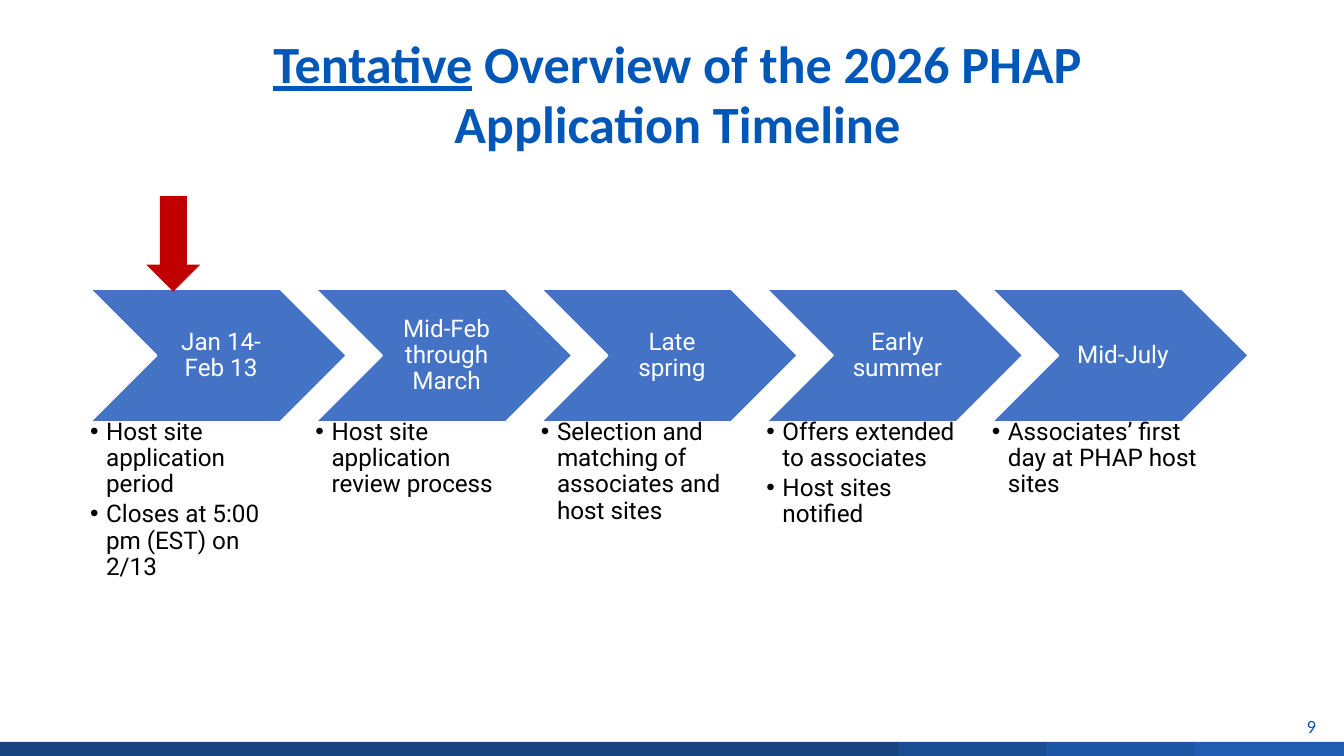
from lxml.etree import SubElement
from pptx import Presentation
from pptx.dml.color import RGBColor
from pptx.enum.shapes import MSO_SHAPE
from pptx.enum.text import MSO_ANCHOR, MSO_AUTO_SIZE, PP_ALIGN
from pptx.oxml.ns import qn
from pptx.util import Inches, Pt

COLORS = {
    "title": "0057B7",
    "chevron": "4472C4",
    "pointer": "C00000",
    "light": "FFFFFF",
    "dark": "000000",
    "band 1": "164380",
    "band 2": "194D93",
    "band 3": "1C56A4",
    "band 4": "1E5DB2",
}
FOOTER_BANDS = [
    (0, 6.69, "band 1"),
    (6.68, 1.11, "band 2"),
    (7.78, 1.12, "band 3"),
    (8.89, 1.11, "band 4"),
]
STAGES = [
    ("Jan 14-Feb 13",
     ["Host site application period", "Closes at 5:00 pm (EST) on 2/13"]),
    ("Mid-Feb through March", ["Host site application review process"]),
    ("Late spring", ["Selection and matching of associates and host sites"]),
    ("Early summer", ["Offers extended to associates", "Host sites notified"]),
    ("Mid-July", ["Associates’ first day at PHAP host sites"]),
]
FIRST_STAGE_LEFT = 0.67
LAST_STAGE_LEFT = 7.38
STAGE_STEP = (LAST_STAGE_LEFT - FIRST_STAGE_LEFT) / (len(STAGES) - 1)


def add_run(paragraph, text, font_name, size, color):
    run = paragraph.add_run()
    run.text = text
    run.font.name = font_name
    run.font.size = Pt(size)
    run.font.color.rgb = RGBColor.from_string(COLORS[color])
    return run


def set_frame(frame, anchor, insets):
    frame.word_wrap = True
    frame.auto_size = MSO_AUTO_SIZE.NONE
    frame.vertical_anchor = anchor
    (frame.margin_left, frame.margin_top,
     frame.margin_right, frame.margin_bottom) = map(Inches, insets)


def add_block(slide, preset, box, color):
    block = slide.shapes.add_shape(preset, *map(Inches, box))
    block.shadow.inherit = False
    block.fill.solid()
    block.fill.fore_color.rgb = RGBColor.from_string(COLORS[color])
    block.line.fill.background()
    return block


def add_title(slide):
    title = slide.shapes.title
    title.left, title.top, title.width, title.height = map(
        Inches, (0.5, 0.23, 9.16, 0.94))
    set_frame(title.text_frame, MSO_ANCHOR.MIDDLE, (0.1, 0.05, 0.18, 0.05))
    heading = title.text_frame.paragraphs[0]
    heading.alignment = PP_ALIGN.CENTER
    heading.line_spacing = Pt(32)

    def add_words(text, underlined):
        words = add_run(heading, text, "Calibri", 28, "title")
        words.font.bold = True
        words.font.underline = underlined

    add_words("Tentative", True)
    add_words(" Overview of the 2026 PHAP", False)
    heading.add_line_break()
    add_words("Application Timeline", False)


def add_page_number(slide):
    corner = slide.shapes.add_textbox(*map(Inches, (9.45, 5.25, 0.44, 0.3)))
    set_frame(corner.text_frame, MSO_ANCHOR.MIDDLE, (0.1, 0.05, 0.1, 0.05))
    number = corner.text_frame.paragraphs[0]
    number.alignment = PP_ALIGN.RIGHT
    add_run(number, "9", "Calibri", 10, "title")


def add_chevron(slide, left, period):
    chevron = add_block(slide, MSO_SHAPE.CHEVRON, (left, 2.15, 1.91, 0.99),
                        "chevron")
    chevron.line.color.rgb = RGBColor.from_string(COLORS["light"])
    chevron.line.width = Pt(1)
    set_frame(chevron.text_frame, MSO_ANCHOR.MIDDLE, (0.06, 0.02, 0.02, 0.02))
    label = chevron.text_frame.paragraphs[0]
    label.alignment = PP_ALIGN.CENTER
    label.line_spacing = 0.9
    add_run(label, period, "Roboto", 13, "light")


def add_bullet(paragraph):
    properties = paragraph._p.get_or_add_pPr()
    properties.set("marL", str(Inches(0.12)))
    properties.set("indent", str(-Inches(0.12)))
    SubElement(properties, qn("a:buFont")).set("typeface", "Arial")
    SubElement(properties, qn("a:buChar")).set("char", "•")


def add_steps(slide, left, steps):
    column = slide.shapes.add_textbox(*map(Inches, (left, 3.12, 1.53, 1.25)))
    frame = column.text_frame
    set_frame(frame, MSO_ANCHOR.TOP, (0, 0, 0, 0))
    for index, step in enumerate(steps):
        item = frame.add_paragraph() if index else frame.paragraphs[0]
        item.level = 1
        add_bullet(item)
        item.line_spacing = 0.9
        item.space_after = Pt(2)
        add_run(item, step, "Roboto", 13, "dark")


def main():
    deck = Presentation()
    deck.slide_width = Inches(10)
    deck.slide_height = deck.slide_width * 9 // 16
    slide = deck.slides.add_slide(deck.slide_layouts[5])
    for left, width, color in FOOTER_BANDS:
        add_block(slide, MSO_SHAPE.RECTANGLE, (left, 5.52, width, 0.12), color)
    add_title(slide)
    add_page_number(slide)
    for index, (period, steps) in enumerate(STAGES):
        left = FIRST_STAGE_LEFT + index * STAGE_STEP
        add_chevron(slide, left, period)
        add_steps(slide, left, steps)
    add_block(slide, MSO_SHAPE.DOWN_ARROW, (1.09, 1.46, 0.4, 0.71), "pointer")
    deck.save("out.pptx")


if __name__ == "__main__":
    main()
